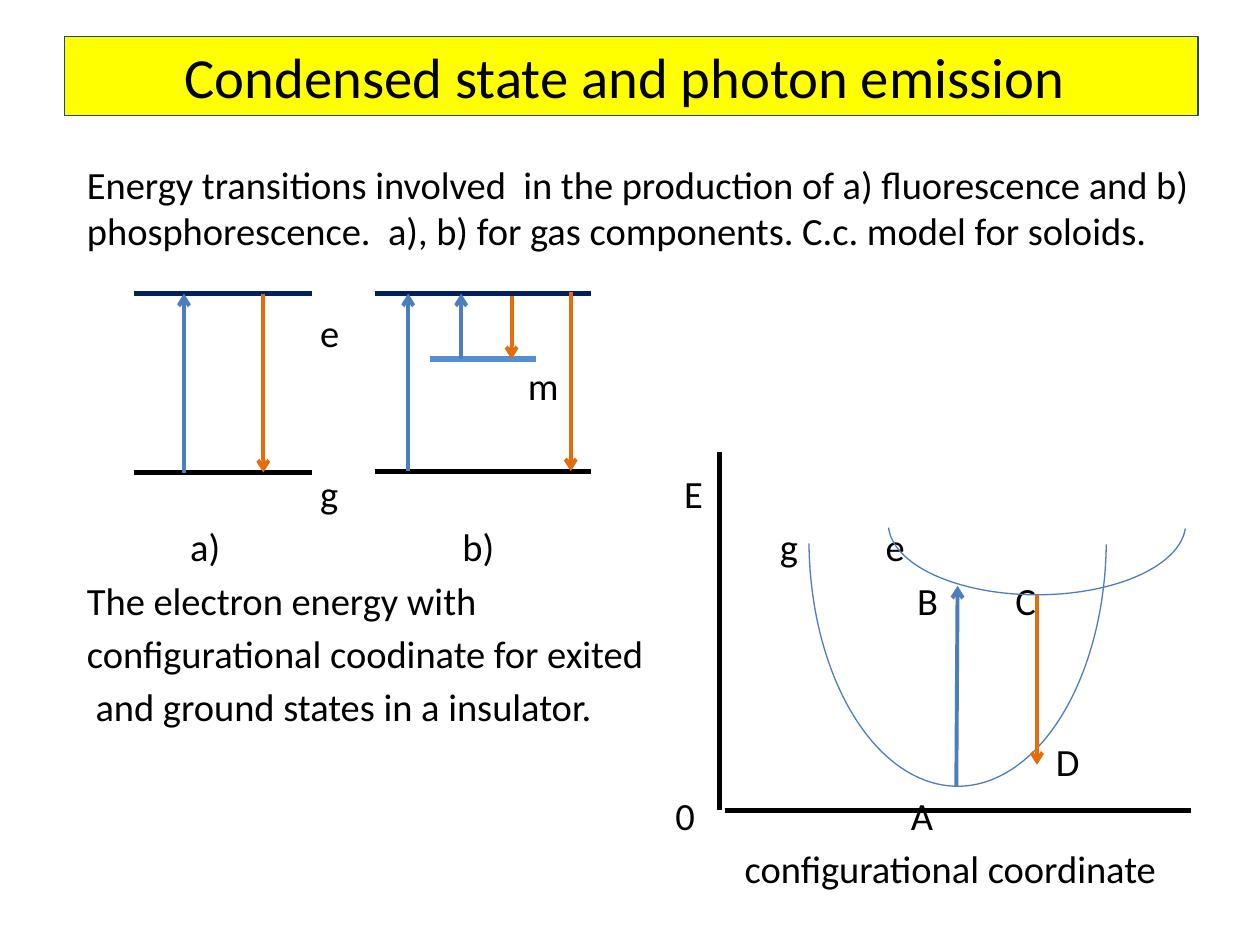
from dataclasses import dataclass

from lxml.etree import SubElement
from pptx import Presentation
from pptx.dml.color import RGBColor
from pptx.enum.shapes import MSO_CONNECTOR as Connector, MSO_SHAPE as Shape
from pptx.enum.text import MSO_ANCHOR as Anchor, PP_ALIGN as Align
from pptx.oxml.ns import qn
from pptx.util import Inches, Pt


@dataclass(frozen=True)
class Theme:
    font: str = "Calibri"
    title_size: float = 32.4
    body_size: float = 22
    text: str = "000000"
    banner: str = "FFFF00"
    banner_line: str = "1F497D"
    excited: str = "002060"
    metastable: str = "558ED5"
    ground: str = "000000"
    absorb: str = "4B7EBC"
    emit: str = "E46C0A"
    level_width: float = 3
    arrow_width: float = 2.25
    thin_width: float = 0.75


@dataclass(frozen=True)
class Label:
    text: str
    left: float
    row: int
    width: float = 0.4


@dataclass(frozen=True)
class Line:
    start: tuple[float, float]
    end: tuple[float, float]
    color: str
    arrow: bool = False


@dataclass(frozen=True)
class Curve:
    left: float
    top: float
    width: float
    height: float


THEME = Theme()
FIRST_ROW, ROW_STEP = 2.45, 0.426
BODY_LEFT = 0.69

INTRO = ("Energy transitions involved  in the production of a) fluorescence and "
         "b) phosphorescence.  a), b) for gas components. C.c. model for soloids.")
EXPLANATION = ("The electron energy with",
               "configurational coodinate for exited",
               " and ground states in a insulator.")

LABELS = (
    # Gas levels
    Label("e", 2.54, 0), Label("m", 4.19, 1), Label("g", 2.54, 3),
    Label("a)", 1.51, 4), Label("b)", 3.67, 4),
    # Configurational coordinate diagram
    Label("E", 5.43, 3), Label("g", 6.19, 4), Label("e", 7.03, 4),
    Label("B", 7.28, 5), Label("C", 8.06, 5), Label("D", 8.38, 8),
    Label("0", 5.36, 9), Label("A", 7.23, 9),
    Label("configurational coordinate", 5.91, 10, 3.6),
)

LEVELS_AND_AXES = (
    Line((1.06, 2.33), (2.48, 2.33), THEME.excited),
    Line((2.98, 2.33), (4.69, 2.33), THEME.excited),
    Line((2.98, 3.74), (4.69, 3.74), THEME.ground),
    Line((3.41, 2.85), (4.25, 2.85), THEME.metastable),
    Line((1.06, 3.75), (2.48, 3.75), THEME.ground),
    Line((5.71, 6.43), (5.71, 3.59), THEME.ground),
    Line((5.75, 6.43), (9.45, 6.43), THEME.ground),
)

TRANSITIONS = (
    Line((2.09, 2.33), (2.09, 3.75), THEME.emit, True),
    Line((1.46, 3.75), (1.46, 2.33), THEME.absorb, True),
    Line((4.53, 2.32), (4.53, 3.74), THEME.emit, True),
    Line((3.24, 3.74), (3.24, 2.33), THEME.absorb, True),
    Line((3.66, 2.85), (3.66, 2.33), THEME.absorb, True),
    Line((4.06, 2.35), (4.06, 2.85), THEME.emit, True),
    Line((7.59, 6.24), (7.6, 4.65), THEME.absorb, True),
    Line((8.23, 4.72), (8.23, 6.07), THEME.emit, True),
)

CURVES = (Curve(6.42, 2.32, 2.36, 3.92), Curve(7.05, 3.59, 2.36, 1.13))


def set_all(target, values: dict) -> None:
    for name, value in values.items():
        setattr(target, name, value)


def style_line(line, color: str, width: float) -> None:
    line.color.rgb = RGBColor.from_string(color)
    line.width = Pt(width)


def write(paragraph, text: str, size: float) -> None:
    run = paragraph.add_run()
    run.text = text
    set_all(run.font, {"name": THEME.font, "size": Pt(size)})
    run.font.color.rgb = RGBColor.from_string(THEME.text)


def add_text(slide, left: float, top: float, width: float, height: float,
             lines: tuple[str, ...], wrap: bool = True) -> None:
    box = slide.shapes.add_textbox(Inches(left), Inches(top), Inches(width), Inches(height))
    frame = box.text_frame
    set_all(frame, {"word_wrap": wrap, "margin_left": 0, "margin_right": 0,
                    "margin_top": 0, "margin_bottom": 0})
    for index, text in enumerate(lines):
        paragraph = frame.add_paragraph() if index else frame.paragraphs[0]
        if index:
            paragraph.space_before = Pt(0.2 * THEME.body_size - 0.5)
        write(paragraph, text, THEME.body_size)


def add_title(slide, text: str) -> None:
    banner = slide.shapes.add_shape(Shape.RECTANGLE, Inches(0.51), Inches(0.29),
                                    Inches(9), Inches(0.63))
    banner.shadow.inherit = False
    banner.fill.solid()
    banner.fill.fore_color.rgb = RGBColor.from_string(THEME.banner)
    style_line(banner.line, THEME.banner_line, THEME.thin_width)
    banner.text_frame.vertical_anchor = Anchor.MIDDLE
    paragraph = banner.text_frame.paragraphs[0]
    paragraph.alignment = Align.CENTER
    write(paragraph, text, THEME.title_size)


def row_top(row: int) -> float:
    return FIRST_ROW + row * ROW_STEP


def add_line(slide, line: Line) -> None:
    ends = (Inches(value) for value in line.start + line.end)
    connector = slide.shapes.add_connector(Connector.STRAIGHT, *ends)
    style_line(connector.line, line.color,
               THEME.arrow_width if line.arrow else THEME.level_width)
    properties = connector.element.spPr
    if line.arrow:
        SubElement(properties.find(qn("a:ln")), qn("a:tailEnd"), type="arrow")
    SubElement(properties, qn("a:effectLst"))


def add_curve(slide, curve: Curve) -> None:
    arc = slide.shapes.add_shape(Shape.ARC, Inches(curve.left), Inches(curve.top),
                                 Inches(curve.width), Inches(curve.height))
    arc.shadow.inherit = False
    arc.rotation = 180
    arc.adjustments[0], arc.adjustments[1] = 109.15, 215.07
    arc.fill.background()
    style_line(arc.line, THEME.absorb, THEME.thin_width)


def main() -> None:
    presentation = Presentation()
    set_all(presentation, {"slide_width": Inches(10), "slide_height": Inches(7.5)})
    slide = presentation.slides.add_slide(presentation.slide_layouts[6])

    # Title and running text
    add_title(slide, "Condensed state and photon emission ")
    add_text(slide, BODY_LEFT, 1.28, 8.8, 0.75, (INTRO,))
    add_text(slide, BODY_LEFT, row_top(5), 4.6, 1.25, EXPLANATION)

    # Labels on the shared row grid
    for label in LABELS:
        add_text(slide, label.left, row_top(label.row), label.width, 0.37,
                 (label.text,), wrap=False)

    # Energy levels, curves and transitions
    for curve in CURVES:
        add_curve(slide, curve)
    for line in LEVELS_AND_AXES + TRANSITIONS:
        add_line(slide, line)

    presentation.save("out.pptx")


if __name__ == "__main__":
    main()
